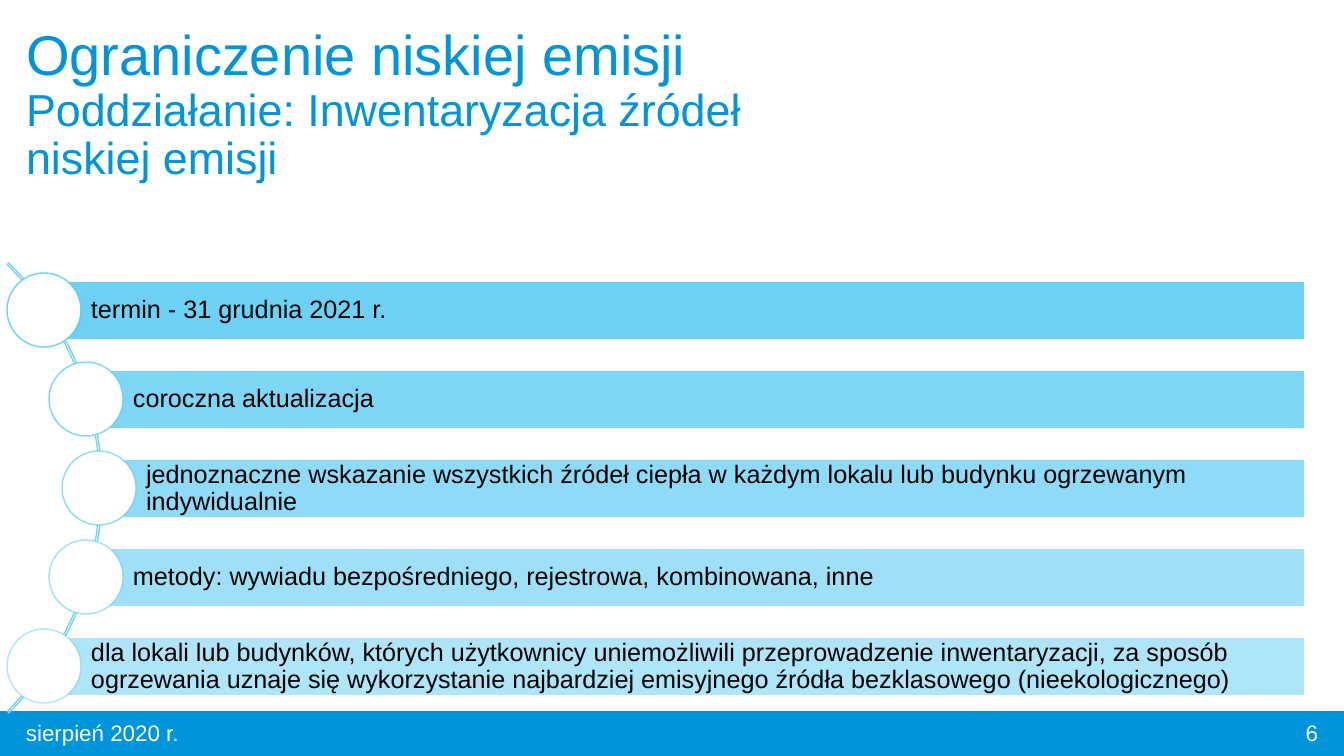
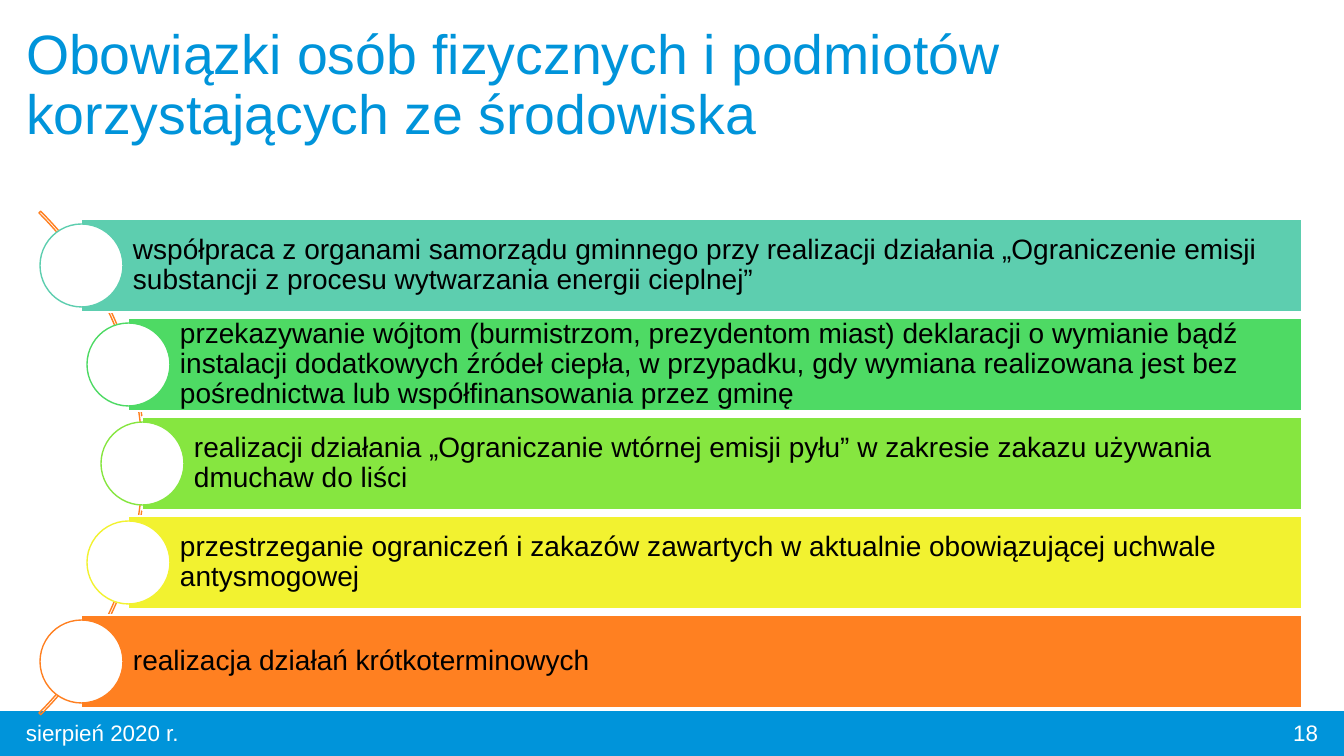
"""Build two slides of text bars strung along an arc."""
from math import sqrt

from lxml.etree import SubElement
from pptx import Presentation
from pptx.dml.color import RGBColor
from pptx.enum.shapes import MSO_SHAPE as Form
from pptx.enum.text import MSO_ANCHOR as Anchor, MSO_AUTO_SIZE as Fit, PP_ALIGN as Align
from pptx.oxml.ns import qn
from pptx.util import Emu, Pt

SCALE = 12192000 / 1344
WIDE, HIGH = 1344, 756
FONT = "Arial"
BLUE, SKY, WHITE, BLACK = "0094DA", "5ECCF3", "FFFFFF", "000000"
TITLE_ONLY = 5


def px(count):
    return Emu(round(count * SCALE))


def tint(color, code):
    color.rgb = RGBColor.from_string(code)


def fade(node, share):
    if share < 100:
        for color in node.iter(qn("a:srgbClr")):
            SubElement(color, qn("a:alpha")).set("val", str(share * 1000))


class Deck:
    def __init__(self):
        self.show = Presentation()
        self.show.slide_width, self.show.slide_height = px(WIDE), px(HIGH)
        self.slide = None

    def page(self, title, width, height, sizes, number):
        layout = self.show.slide_layouts[TITLE_ONLY]
        self.slide = self.show.slides.add_slide(layout)
        self.shape(Form.RECTANGLE, (0, 712, WIDE, 44), BLUE, BLUE)
        self.title(title, width, height, sizes)
        self.note("sierpień 2020 r.", 16, 403, Align.LEFT)
        self.note(str(number), 1026, 302, Align.RIGHT)

    def place(self, item, box):
        item.left, item.top, item.width, item.height = map(px, box)

    def style(self, para, size, color, align=Align.LEFT, lead=0.9):
        para.alignment, para.line_spacing = align, lead
        for run in para.runs:
            run.font.name, run.font.size = FONT, Pt(size)
            tint(run.font.color, color)

    def title(self, text, width, height, sizes):
        head = self.slide.shapes.title
        self.place(head, (16, 22, width, height))
        frame = head.text_frame
        frame.text = text
        frame.word_wrap, frame.auto_size = True, Fit.NONE
        frame.vertical_anchor = Anchor.TOP
        for para, size in zip(frame.paragraphs, sizes):
            self.style(para, size, BLUE)

    def note(self, text, left, width, align):
        box = self.slide.shapes.add_textbox(*map(px, (left, 713, width, 40)))
        frame = box.text_frame
        frame.text, frame.word_wrap = text, True
        frame.vertical_anchor = Anchor.MIDDLE
        self.style(frame.paragraphs[0], 16, WHITE, align, 1.0)

    def shape(self, form, box, fill, line):
        item = self.slide.shapes.add_shape(form, *map(px, box))
        item.shadow.inherit = False
        if fill:
            item.fill.solid()
            tint(item.fill.fore_color, fill)
        else:
            item.fill.background()
        item.line.width = Pt(1)
        tint(item.line.color, line)
        return item

    def arc(self, mid_x, mid_y, radius, color):
        box = (mid_x - radius, mid_y - radius, 2 * radius, 2 * radius)
        item = self.shape(Form.BLOCK_ARC, box, None, color)
        for index, value in enumerate((189, 27, 0.0034)):
            item.adjustments[index] = value

    def bar(self, text, box, color, share, size, indent, pad):
        item = self.shape(Form.RECTANGLE, box, color, WHITE)
        fade(item.element.spPr.find(qn("a:solidFill")), share)
        frame = item.text_frame
        frame.text, frame.word_wrap = text, True
        frame.vertical_anchor = Anchor.MIDDLE
        frame.margin_left = px(indent)
        frame.margin_right = frame.margin_top = frame.margin_bottom = px(pad)
        self.style(frame.paragraphs[0], size, BLACK)

    def dot(self, x, y, size, color, share):
        box = (x - size // 2, y - size // 2, size, size)
        item = self.shape(Form.OVAL, box, WHITE, color)
        fade(item.element.spPr.find(qn("a:ln")), share)

    def chain(self, rows, hub, radius, line, step, right, high, dot, size, indent, pad):
        mid_x, mid_y = hub
        self.arc(mid_x, mid_y, radius, line)
        for index, (text, color, share) in enumerate(rows):
            drop = (index - len(rows) // 2) * step
            x = mid_x + round(sqrt((radius - 3) ** 2 - drop ** 2))
            y = mid_y + drop
            box = (x, y - high // 2, right - x, high)
            self.bar(text, box, color, share, size, indent, pad)
            self.dot(x, y, dot, color, share)


def main():
    deck = Deck()

    deck.page(
        "Ograniczenie niskiej emisji\nPoddziałanie: Inwentaryzacja źródeł niskiej emisji",
        867, 147, (40, 32), 6)
    terms = (
        "termin - 31 grudnia 2021 r.",
        "coroczna aktualizacja",
        "jednoznaczne wskazanie wszystkich źródeł ciepła w każdym lokalu lub budynku "
        "ogrzewanym indywidualnie",
        "metody: wywiadu bezpośredniego, rejestrowa, kombinowana, inne",
        "dla lokali lub budynków, których użytkownicy uniemożliwili przeprowadzenie "
        "inwentaryzacji, za sposób ogrzewania uznaje się wykorzystanie najbardziej "
        "emisyjnego źródła bezklasowego (nieekologicznego)",
    )
    rows = [(text, SKY, 90 - 10 * index) for index, text in enumerate(terms)]
    deck.chain(rows, (-216, 488), 318, "7CD2F4", step=89, right=1305, high=59,
               dot=74, size=18, indent=47, pad=5)

    deck.page("Obowiązki osób fizycznych i podmiotów korzystających ze środowiska",
              1038, 128, (39.6,), 18)
    duties = (
        ("współpraca z organami samorządu gminnego przy realizacji działania "
         "„Ograniczenie emisji substancji z procesu wytwarzania energii cieplnej”",
         "5DCEAF", 100),
        ("przekazywanie wójtom (burmistrzom, prezydentom miast) deklaracji o wymianie "
         "bądź instalacji dodatkowych źródeł ciepła, w przypadku, gdy wymiana "
         "realizowana jest bez pośrednictwa lub współfinansowania przez gminę",
         "4EDA64", 100),
        ("realizacji działania „Ograniczanie wtórnej emisji pyłu” w zakresie zakazu "
         "używania dmuchaw do liści", "86E640", 100),
        ("przestrzeganie ograniczeń i zakazów zawartych w aktualnie obowiązującej "
         "uchwale antysmogowej", "F2F230", 100),
        ("realizacja działań krótkoterminowych", "FF8021", 100),
    )
    deck.chain(duties, (-211, 463), 356, "FF8021", step=99, right=1302, high=93,
               dot=83, size=20, indent=52, pad=6)

    deck.show.save("out.pptx")


if __name__ == "__main__":
    main()
